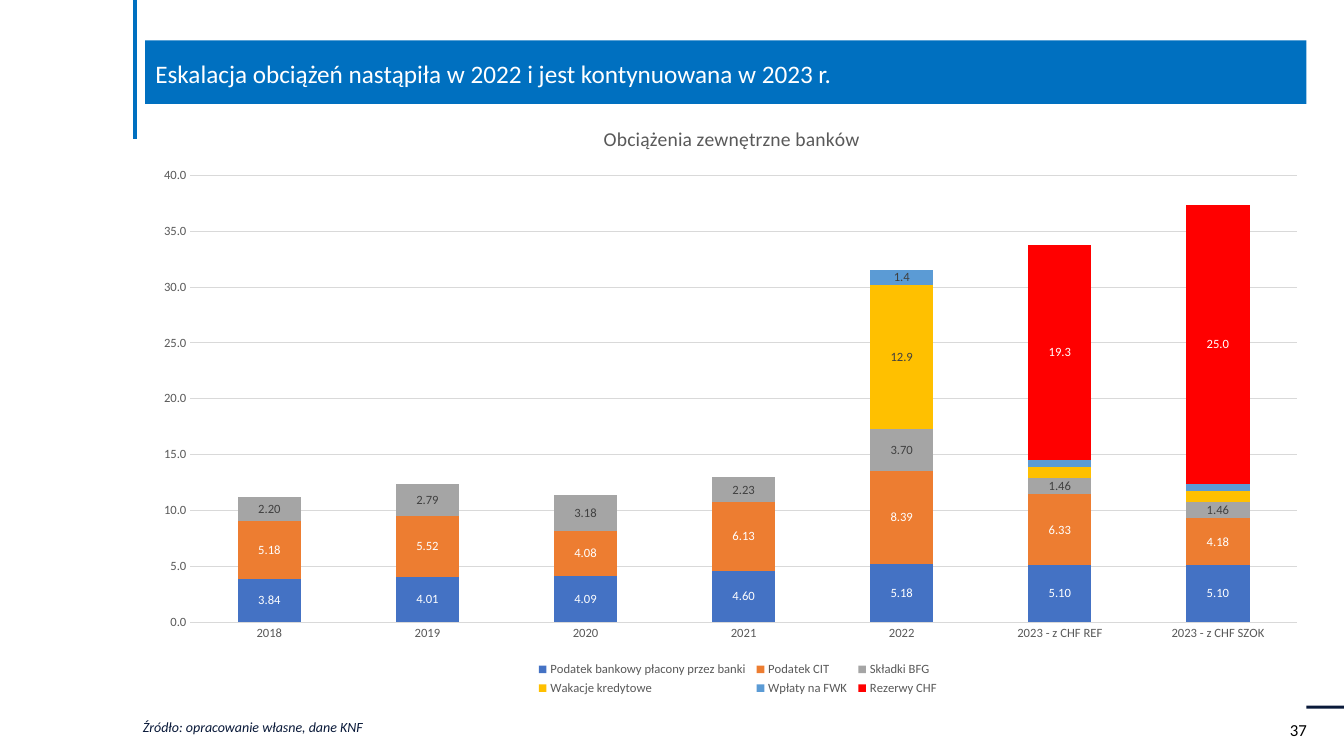
"""Build the slide on external burdens of banks as a stacked column chart."""
from lxml import etree
from pptx import Presentation
from pptx.chart.data import CategoryChartData
from pptx.dml.color import RGBColor
from pptx.enum.chart import XL_CHART_TYPE as ChartType
from pptx.enum.chart import XL_LEGEND_POSITION as LegendPosition
from pptx.enum.chart import XL_TICK_MARK as TickMark
from pptx.enum.shapes import MSO_CONNECTOR as Connector
from pptx.enum.shapes import MSO_SHAPE as Shape
from pptx.enum.text import MSO_ANCHOR as Anchor
from pptx.enum.text import MSO_AUTO_SIZE as AutoSize
from pptx.enum.text import PP_ALIGN as Align
from pptx.oxml.ns import qn
from pptx.util import Cm, Pt

BLACK = RGBColor(0x00, 0x00, 0x00)
WHITE = RGBColor(0xFF, 0xFF, 0xFF)
BLUE = RGBColor(0x00, 0x70, 0xC0)
NAVY = RGBColor(0x09, 0x19, 0x39)
GREY = RGBColor(0x59, 0x59, 0x59)
DARK_GREY = RGBColor(0x40, 0x40, 0x40)
LIGHT_GREY = RGBColor(0xD9, 0xD9, 0xD9)
BANK_TAX = RGBColor(0x44, 0x72, 0xC4)
INCOME_TAX = RGBColor(0xED, 0x7D, 0x31)
GUARANTEE_FUND = RGBColor(0xA5, 0xA5, 0xA5)
CREDIT_HOLIDAYS = RGBColor(0xFF, 0xC0, 0x00)
SUPPORT_FUND = RGBColor(0x5B, 0x9B, 0xD5)
FRANC_RESERVES = RGBColor(0xFF, 0x00, 0x00)

YEARS = ["2018", "2019", "2020", "2021", "2022", "2023 - z CHF REF", "2023 - z CHF SZOK"]
INDEX_2022 = YEARS.index("2022")
# Name, values, fill, label colour, label format, index of the only labelled column
BURDENS = [
    ("Podatek bankowy płacony przez banki", [3.84, 4.01, 4.09, 4.6, 5.18, 5.1, 5.1],
     BANK_TAX, WHITE, "0.00", None),
    ("Podatek CIT", [5.18, 5.52, 4.08, 6.13, 8.39, 6.33, 4.18],
     INCOME_TAX, WHITE, "0.00", None),
    ("Składki BFG", [2.2, 2.79, 3.18, 2.23, 3.7, 1.46, 1.46],
     GUARANTEE_FUND, DARK_GREY, "0.00", None),
    ("Wakacje kredytowe", [0, 0, 0, 0, 12.9, 1, 1],
     CREDIT_HOLIDAYS, DARK_GREY, "General", INDEX_2022),
    ("Wpłaty na FWK", [0, 0, 0, 0, 1.4, 0.6, 0.6],
     SUPPORT_FUND, DARK_GREY, "General", INDEX_2022),
    ("Rezerwy CHF", [None] * 5 + [19.3, 25],
     FRANC_RESERVES, WHITE, "#,##0.0", None),
]


def format_font(font, size, color, italic=False):
    font.name = "Calibri"
    font.size = Pt(size)
    font.bold = False
    font.italic = italic
    font.color.rgb = color


def write(frame, text, size=12, color=BLACK, italic=False, align=Align.LEFT, spacing=None):
    frame.text = text
    paragraph = frame.paragraphs[0]
    paragraph.alignment = align
    if spacing:
        paragraph.line_spacing = spacing
    format_font(paragraph.runs[0].font, size, color, italic)


def make_layout(x, y, width, height, inner=False):
    layout = etree.Element(qn("c:layout"))
    manual = etree.SubElement(layout, qn("c:manualLayout"))
    settings = [("layoutTarget", "inner")] if inner else []
    settings += [("xMode", "edge"), ("yMode", "edge"),
                 ("x", x), ("y", y), ("w", width), ("h", height)]
    for name, value in settings:
        etree.SubElement(manual, qn(f"c:{name}")).set("val", str(value))
    return layout


class SlideBuilder:
    def __init__(self, presentation):
        self.slide = presentation.slides.add_slide(presentation.slide_layouts[5])
        self.shapes = self.slide.shapes

    def title(self, text, left, top, width, height):
        shape = self.shapes.title
        shape.left, shape.top, shape.width, shape.height = map(Cm, (left, top, width, height))
        shape.fill.solid()
        shape.fill.fore_color.rgb = BLUE
        frame = shape.text_frame
        frame.auto_size = AutoSize.NONE
        frame.vertical_anchor = Anchor.MIDDLE
        write(frame, text, size=18, color=WHITE, spacing=1.07)

    def text(self, text, left, top, width, height, **style):
        frame = self.shapes.add_textbox(*map(Cm, (left, top, width, height))).text_frame
        frame.word_wrap = True
        write(frame, text, **style)

    def bar(self, left, top, width, height, color):
        shape = self.shapes.add_shape(Shape.RECTANGLE, *map(Cm, (left, top, width, height)))
        shape.shadow.inherit = False
        shape.fill.solid()
        shape.fill.fore_color.rgb = color
        shape.line.fill.background()

    def line(self, start_x, start_y, end_x, end_y, color, width):
        line = self.shapes.add_connector(
            Connector.STRAIGHT, *map(Cm, (start_x, start_y, end_x, end_y)))
        line.line.color.rgb = color
        line.line.width = Pt(width)
        etree.SubElement(line._element.spPr, qn("a:effectLst"))

    def chart(self, title, left, top, width, height):
        data = CategoryChartData()
        data.categories = YEARS
        for name, values, *_ in BURDENS:
            data.add_series(name, values)
        chart = self.shapes.add_chart(
            ChartType.COLUMN_STACKED, *map(Cm, (left, top, width, height)), data).chart
        format_font(chart.font, 10, BLACK)
        chart.has_title = True
        write(chart.chart_title.text_frame, title, size=14, color=GREY, align=Align.CENTER)
        plot = chart.plots[0]
        plot.gap_width, plot.overlap = 150, 100
        plot.vary_by_categories = False
        for series, burden in zip(plot.series, BURDENS):
            self.style_series(series, *burden[2:])
        self.style_axes(chart)
        self.arrange(chart)

    def style_series(self, series, fill, label_color, number_format, labelled):
        series.format.fill.solid()
        series.format.fill.fore_color.rgb = fill
        labels = series.data_labels
        labels.show_value = labelled is None
        labels.number_format = number_format
        labels.number_format_is_linked = False
        format_font(labels.font, 9, label_color)
        if labelled is not None:
            format_font(series.points[labelled].data_label.font, 9, label_color)

    def style_axes(self, chart):
        category, value = chart.category_axis, chart.value_axis
        for axis in (category, value):
            axis.major_tick_mark = axis.minor_tick_mark = TickMark.NONE
            format_font(axis.tick_labels.font, 9, GREY)
        value.minimum_scale, value.maximum_scale, value.major_unit = 0, 40, 5
        value.tick_labels.number_format = "0.0"
        value.tick_labels.number_format_is_linked = False
        value.format.line.fill.background()
        value.has_major_gridlines = True
        for line in (category.format.line, value.major_gridlines.format.line):
            line.color.rgb = LIGHT_GREY
            line.width = Pt(0.75)

    def arrange(self, chart):
        chart.has_legend = True
        chart.legend.position = LegendPosition.BOTTOM
        chart.legend.include_in_layout = False
        format_font(chart.legend.font, 9, GREY)
        plot_area = chart._chartSpace.find(".//" + qn("c:plotArea"))
        legend = chart._chartSpace.find(".//" + qn("c:legend"))
        for parent in (plot_area, legend):
            for layout in parent.findall(qn("c:layout")):
                parent.remove(layout)
        plot_area.insert(0, make_layout(0.04, 0.12, 0.94, 0.75, inner=True))
        legend.find(qn("c:legendPos")).addnext(make_layout(0.33, 0.93, 0.35, 0.07))


def main():
    presentation = Presentation()
    presentation.slide_width, presentation.slide_height = Cm(33.87), Cm(19.05)
    builder = SlideBuilder(presentation)
    builder.text("37", 32.26, 18.01, 1.14, 0.76)
    builder.bar(32.92, 17.78, 0.95, 0.08, NAVY)
    builder.text("Źródło: opracowanie własne, dane KNF", 3.35, 17.78, 12.73, 0.84,
                 size=10, color=NAVY, italic=True, spacing=1.5)
    builder.chart("Obciążenia zewnętrzne banków", 3.61, 2.62, 29.67, 15.01)
    builder.title("Eskalacja obciążeń nastąpiła w 2022 i jest kontynuowana w 2023 r.",
                  3.66, 1.02, 29.26, 1.6)
    builder.line(3.4, 0, 3.4, 3.5, BLUE, 3)
    presentation.save("out.pptx")


if __name__ == "__main__":
    main()
